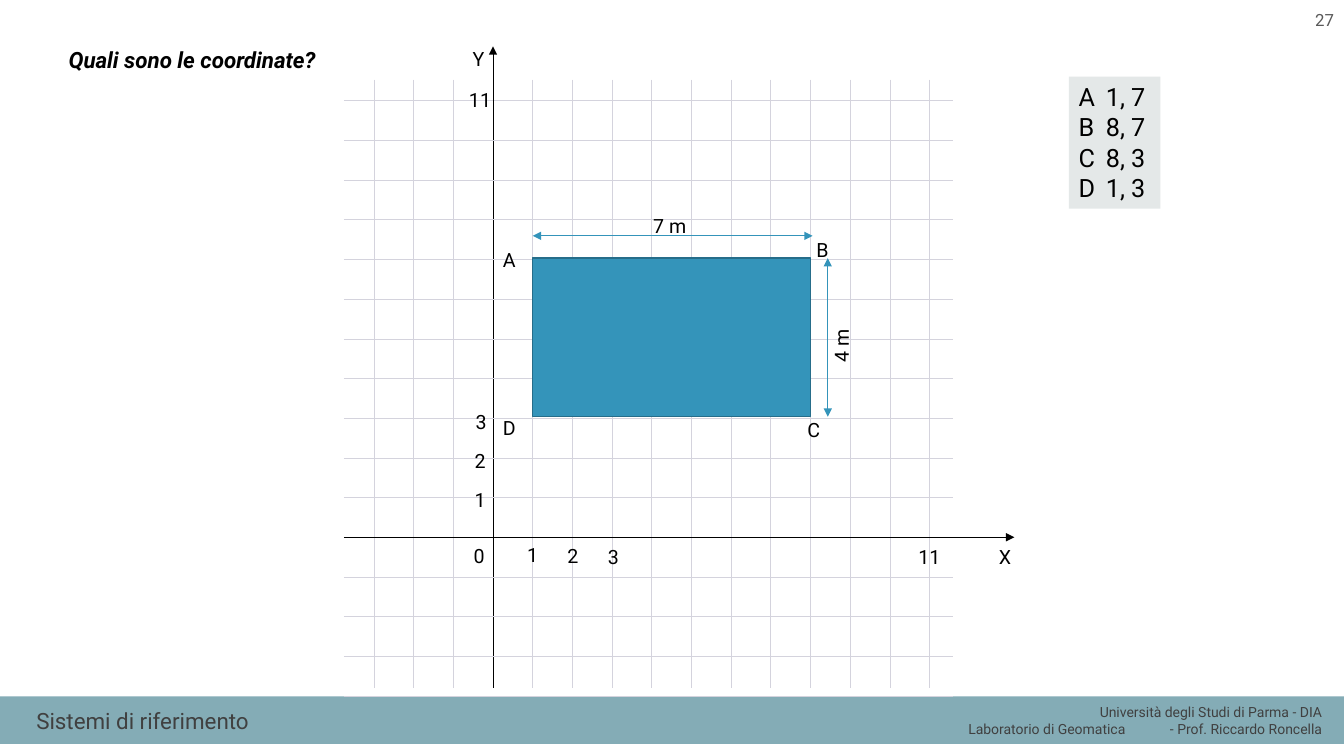
from pptx import Presentation
from pptx.dml.color import RGBColor
from pptx.enum.shapes import MSO_CONNECTOR, MSO_SHAPE
from pptx.enum.text import MSO_ANCHOR, MSO_AUTO_SIZE, PP_ALIGN
from pptx.oxml.ns import qn
from pptx.util import Inches, Pt
from lxml.etree import SubElement

BLACK = RGBColor(0x00, 0x00, 0x00)
GREY = RGBColor(0x40, 0x40, 0x40)
PAGE_GREY = RGBColor(0x59, 0x59, 0x59)
GRID = RGBColor(0xD4, 0xD3, 0xDD)
BAND = RGBColor(0x84, 0xAC, 0xB6)
PANEL = RGBColor(0xE4, 0xE8, 0xE8)
BLUE = RGBColor(0x34, 0x94, 0xBA)
DARK_BLUE = RGBColor(0x26, 0x6D, 0x8A)

# Grid: origin of the axes, cell side and drawn extent, in inches
X0, Y0, CELL = 4.89, 5.33, 4.33 / 11
LEFT, RIGHT, TOP, BOTTOM = 3.41, 9.45, 0.79, 6.83

prs = Presentation()
prs.slide_width, prs.slide_height = Inches(13.33), Inches(7.5)
s = prs.slides.add_slide(prs.slide_layouts[1])


def write(sp, box, lines, size, color=BLACK, align=PP_ALIGN.LEFT, anchor=MSO_ANCHOR.TOP, **style):
    sp.left, sp.top, sp.width, sp.height = [Inches(v) for v in box]
    tf = sp.text_frame
    tf.word_wrap, tf.auto_size, tf.vertical_anchor = True, MSO_AUTO_SIZE.NONE, anchor
    for i, line in enumerate(lines):
        p = tf.paragraphs[0] if i == 0 else tf.add_paragraph()
        p.alignment = align
        r = p.add_run()
        r.text = line
        r.font.color.rgb = color
        for name, value in {"name": "Roboto", "size": Pt(size), **style}.items():
            setattr(r.font, name, value)
    return sp


def line(x1, y1, x2, y2, color, ends=()):
    c = s.shapes.add_connector(MSO_CONNECTOR.STRAIGHT, *[Inches(v) for v in (x1, y1, x2, y2)])
    c.line.color.rgb, c.line.width = color, Pt(0.5)
    for end in ends:
        SubElement(c.line._get_or_add_ln(), qn(f"a:{end}"), type="triangle")
    SubElement(c.element.spPr, qn("a:effectLst"))


# Footer band, behind the title
band = s.shapes.add_shape(MSO_SHAPE.RECTANGLE, 0, Inches(6.91), prs.slide_width, Inches(0.47))
band.shadow.inherit = False
band.fill.solid()
band.fill.fore_color.rgb = BAND
band.line.fill.background()
band.element.getparent().insert(2, band.element)

# Title and question
write(s.shapes.title, (0.26, 6.95, 7.27, 0.4), ["Sistemi di riferimento"], 16, GREY,
      anchor=MSO_ANCHOR.MIDDLE)
question = write(s.placeholders[1], (0.58, 0.46, 3.6, 0.33), ["Quali sono le coordinate?"], 16,
                 bold=True, italic=True)
p = question.text_frame.paragraphs[0]
p.line_spacing, p.space_before = 0.8, Pt(0)
pPr = p._p.get_or_add_pPr()
pPr.set("marL", "0")
pPr.set("indent", "0")
SubElement(pPr, qn("a:buNone"))

# Credits and page number
write(s.shapes.add_textbox(0, 0, 0, 0), (9.06, 6.93, 4.15, 0.44),
      ["Università degli Studi di Parma - DIA",
       "Laboratorio di Geomatica\t- Prof. Riccardo Roncella"], 10, GREY, PP_ALIGN.RIGHT)
write(s.shapes.add_textbox(0, 0, 0, 0), (12.6, 0, 0.73, 0.4), ["27"], 12, PAGE_GREY,
      PP_ALIGN.RIGHT, MSO_ANCHOR.MIDDLE)

# Coordinate list, with a tab stop between letter and values
panel = s.shapes.add_shape(MSO_SHAPE.RECTANGLE, 0, 0, 0, 0)
panel.shadow.inherit = False
panel.fill.solid()
panel.fill.fore_color.rgb = PANEL
panel.line.fill.background()
write(panel, (10.6, 0.76, 0.91, 1.31), ["A\t1, 7", "B\t8, 7", "C\t8, 3", "D\t1, 3"], 18)
panel.text_frame.margin_right = 0
for p in panel.text_frame.paragraphs:
    tabs = SubElement(p._p.get_or_add_pPr(), qn("a:tabLst"))
    SubElement(tabs, qn("a:tab"), pos=str(Inches(0.27)), algn="l")

# Grid lines; the two through the origin are the axes
for i in range(-3, 12):
    x = X0 + i * CELL
    line(x, TOP, x, BOTTOM, GRID if i else BLACK)
for i in range(-4, 12):
    y = Y0 - i * CELL
    line(LEFT, y, RIGHT, y, GRID if i else BLACK)
line(X0, Y0 - 10 * CELL, X0, 0.46, BLACK, ["tailEnd"])
line(X0 + 9 * CELL, Y0, 10.06, Y0, BLACK, ["tailEnd"])

# Rectangle ABCD, 7 by 4 cells
rect_left, rect_top = X0 + CELL, 2.56
rect = s.shapes.add_shape(MSO_SHAPE.RECTANGLE, Inches(rect_left), Inches(rect_top),
                          Inches(7 * CELL), Inches(4 * CELL))
rect.shadow.inherit = False
rect.fill.solid()
rect.fill.fore_color.rgb = BLUE
rect.line.color.rgb, rect.line.width = DARK_BLUE, Pt(1)

# Dimension arrows
both = ["headEnd", "tailEnd"]
line(rect_left, 2.34, 8.06, 2.34, BLUE, both)
line(8.21, rect_top, 8.21, rect_top + 4 * CELL, BLUE, both)

# Axis, corner and dimension labels: text, left, top, width
labels = [
    ("0", 4.6, 5.35, 0.2), ("Y", 4.59, 0.42, 0.2), ("X", 9.81, 5.36, 0.2),
    ("1", 4.61, 4.79, 0.2), ("2", 4.61, 4.4, 0.2), ("3", 4.62, 4.02, 0.2),
    ("1", 5.13, 5.34, 0.2), ("2", 5.53, 5.35, 0.2), ("3", 5.93, 5.36, 0.2),
    ("11", 9.01, 5.36, 0.49),
    ("A", 4.89, 2.41, 0.93), ("B", 8, 2.31, 0.93), ("C", 7.91, 4.1, 0.93), ("D", 4.89, 4.08, 0.93),
    ("7 m", 6.38, 2.07, 0.93),
]
for text, x, y, w in labels:
    write(s.shapes.add_textbox(0, 0, 0, 0), (x, y, w, 0.34), [text], 14)
write(s.shapes.add_textbox(0, 0, 0, 0), (4.51, 0.82, 0.46, 0.34), ["11"], 14, align=PP_ALIGN.RIGHT)
height = write(s.shapes.add_textbox(0, 0, 0, 0), (7.88, 3.06, 0.93, 0.34), ["4 m"], 14)
height.rotation = 270

prs.save("out.pptx")
